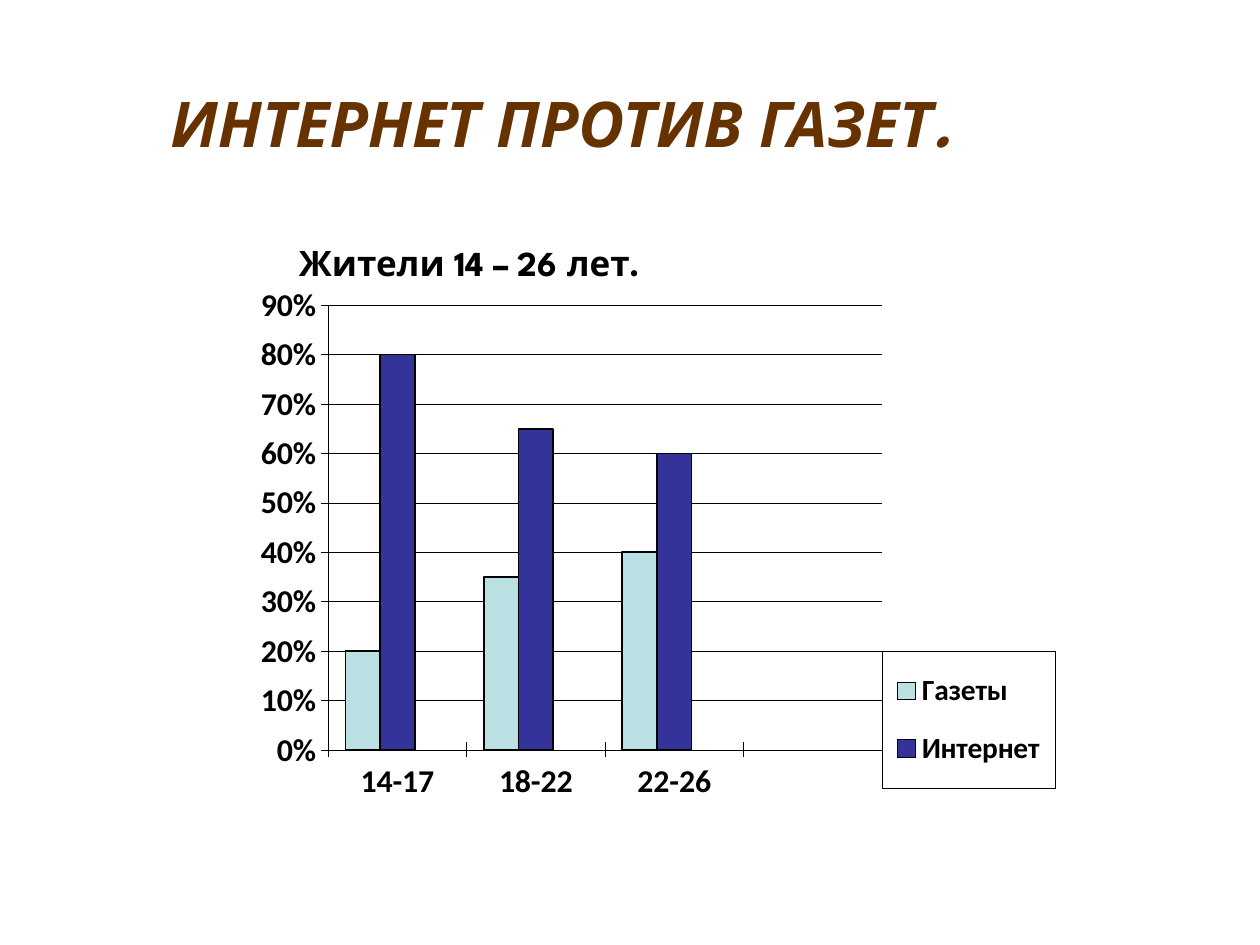
from dataclasses import dataclass
from typing import Optional

from lxml import etree
from pptx import Presentation
from pptx.chart.data import CategoryChartData
from pptx.dml.color import RGBColor
from pptx.enum.chart import XL_CHART_TYPE, XL_LEGEND_POSITION, XL_TICK_LABEL_POSITION, XL_TICK_MARK
from pptx.enum.text import MSO_ANCHOR, PP_ALIGN
from pptx.oxml import parse_xml
from pptx.oxml.ns import nsdecls, qn
from pptx.util import Cm, Pt

COLUMNS = XL_CHART_TYPE.COLUMN_CLUSTERED
LEGEND_RIGHT = XL_LEGEND_POSITION.RIGHT
LABELS_LOW = XL_TICK_LABEL_POSITION.LOW
TICK_CROSS, TICK_NONE = XL_TICK_MARK.CROSS, XL_TICK_MARK.NONE
TOP, BOTTOM, LEFT = MSO_ANCHOR.TOP, MSO_ANCHOR.BOTTOM, PP_ALIGN.LEFT

COLORS = {
    "title": "663300", "ink": "000000", "paper": "FFFFFF",
    "newspapers": "BBE0E3", "internet": "333399", "empty": "009999",
}
HEADING_FONT, CHART_FONT = "League Spartan", "Calibri"


@dataclass(frozen=True)
class Area:
    left: float
    top: float
    width: float
    height: float

    def lengths(self) -> tuple:
        return Cm(self.left), Cm(self.top), Cm(self.width), Cm(self.height)


@dataclass(frozen=True)
class Series:
    name: str
    values: tuple[Optional[float], ...]
    color: str


TITLE_AREA = Area(3.18, 1.57, 18.82, 3.78)
SUBTITLE_AREA = Area(5.77, 3.38, 16.08, 3.38)
CHART_AREA = Area(4.95, 5.77, 16.66, 11.12)
# Fractions of the chart area
PLOT_PART = Area(0.1, 0.03, 0.67, 0.81)
LEGEND_PART = Area(0.77, 0.66, 0.21, 0.25)

AGE_GROUPS = ("14-17", "18-22", "22-26", "")
SERIES = (
    Series("Газеты", (0.2, 0.35, 0.4, None), "newspapers"),
    Series("Интернет", (0.8, 0.65, 0.6, None), "internet"),
    Series("Series 3", (None,) * 4, "empty"),
)


def color(name: str) -> RGBColor:
    return RGBColor.from_string(COLORS[name])


def format_font(font, *, size: float, name: str = CHART_FONT, ink: str = "ink",
                italic: bool = False) -> None:
    font.name, font.size, font.bold, font.italic = name, Pt(size), True, italic
    font.color.rgb = color(ink)


def write_text(box, text: str, *, area: Area, anchor, size: float, ink: str = "ink",
               italic: bool = False) -> None:
    box.left, box.top, box.width, box.height = area.lengths()
    frame = box.text_frame
    frame.word_wrap, frame.vertical_anchor = True, anchor
    para = frame.paragraphs[0]
    para.alignment, para.space_before = LEFT, Pt(0)
    span = para.add_run()
    span.text = text
    format_font(span.font, size=size, name=HEADING_FONT, ink=ink, italic=italic)


def format_line(line, width: float) -> None:
    line.color.rgb, line.width = color("ink"), Pt(width)


def layout_xml(part: Area, inner: bool = False):
    target = '<c:layoutTarget val="inner"/>' if inner else ""
    return parse_xml(
        f'<c:layout {nsdecls("c")}><c:manualLayout>{target}'
        '<c:xMode val="edge"/><c:yMode val="edge"/>'
        f'<c:x val="{part.left}"/><c:y val="{part.top}"/>'
        f'<c:w val="{part.width}"/><c:h val="{part.height}"/>'
        '</c:manualLayout></c:layout>')


def replace_layout(parent, layout, position: int) -> None:
    for old in parent.findall(qn("c:layout")):
        parent.remove(old)
    parent.insert(position, layout)


def format_axis(axis) -> None:
    axis.major_tick_mark, axis.minor_tick_mark = TICK_CROSS, TICK_NONE
    format_line(axis.format.line, 0.25)
    format_font(axis.tick_labels.font, size=18.2)


def format_legend(chart) -> None:
    chart.has_legend = True
    legend = chart.legend
    legend.position, legend.include_in_layout = LEGEND_RIGHT, False
    format_font(legend.font, size=16.8)
    element = legend._element
    # The empty series has no legend entry
    element.insert(1, parse_xml(
        f'<c:legendEntry {nsdecls("c")}><c:idx val="{len(SERIES) - 1}"/>'
        '<c:delete val="1"/></c:legendEntry>'))
    replace_layout(element, layout_xml(LEGEND_PART), 2)
    element.find(qn("c:txPr")).addprevious(parse_xml(
        f'<c:spPr {nsdecls("c", "a")}><a:noFill/><a:ln w="3175"><a:solidFill>'
        f'<a:srgbClr val="{COLORS["ink"]}"/></a:solidFill></a:ln></c:spPr>'))


def add_age_chart(page) -> None:
    data = CategoryChartData(number_format="0%")
    data.categories = AGE_GROUPS
    for series in SERIES:
        data.add_series(series.name, series.values)
    chart = page.shapes.add_chart(COLUMNS, *CHART_AREA.lengths(), data).chart
    chart.has_title = False
    format_font(chart.font, size=18.2)

    # Columns
    plot = chart.plots[0]
    plot.gap_width, plot.overlap, plot.vary_by_categories = 100, 0, False
    for column, series in zip(plot.series, SERIES):
        column.format.fill.solid()
        column.format.fill.fore_color.rgb = color(series.color)
        format_line(column.format.line, 1)

    # Axes and legend
    format_axis(chart.category_axis)
    chart.category_axis.tick_label_position = LABELS_LOW
    percent = chart.value_axis
    format_axis(percent)
    percent.minimum_scale, percent.maximum_scale, percent.major_unit = 0, 0.9, 0.1
    percent.tick_labels.number_format = "0%"
    percent.tick_labels.number_format_is_linked = False
    percent.has_major_gridlines = True
    format_line(percent.major_gridlines.format.line, 0.25)
    format_legend(chart)
    plot_area = chart._chartSpace.find(".//" + qn("c:plotArea"))
    replace_layout(plot_area, layout_xml(PLOT_PART, inner=True), 0)


def main() -> None:
    deck = Presentation()
    deck.slide_width, deck.slide_height = Cm(25.4), Cm(19.05)
    page = deck.slides.add_slide(deck.slide_layouts[1])

    # Title
    write_text(page.shapes.title, "ИНТЕРНЕТ ПРОТИВ ГАЗЕТ.", area=TITLE_AREA, anchor=TOP,
               size=36, ink="title", italic=True)

    # Subtitle on a faint white panel, without a bullet
    body = page.placeholders[1]
    body.fill.solid()
    body.fill.fore_color.rgb = color("paper")
    fill_color = body._element.spPr.find(".//" + qn("a:srgbClr"))
    etree.SubElement(fill_color, qn("a:alpha")).set("val", "10000")
    properties = body.text_frame.paragraphs[0]._p.get_or_add_pPr()
    properties.set("marL", "0")
    properties.set("indent", "0")
    etree.SubElement(properties, qn("a:buNone"))
    write_text(body, "Жители 14 – 26 лет.", area=SUBTITLE_AREA, anchor=BOTTOM, size=20)
    body.text_frame.margin_bottom = Cm(1.05)

    # Chart
    add_age_chart(page)
    deck.save("out.pptx")


if __name__ == "__main__":
    main()
